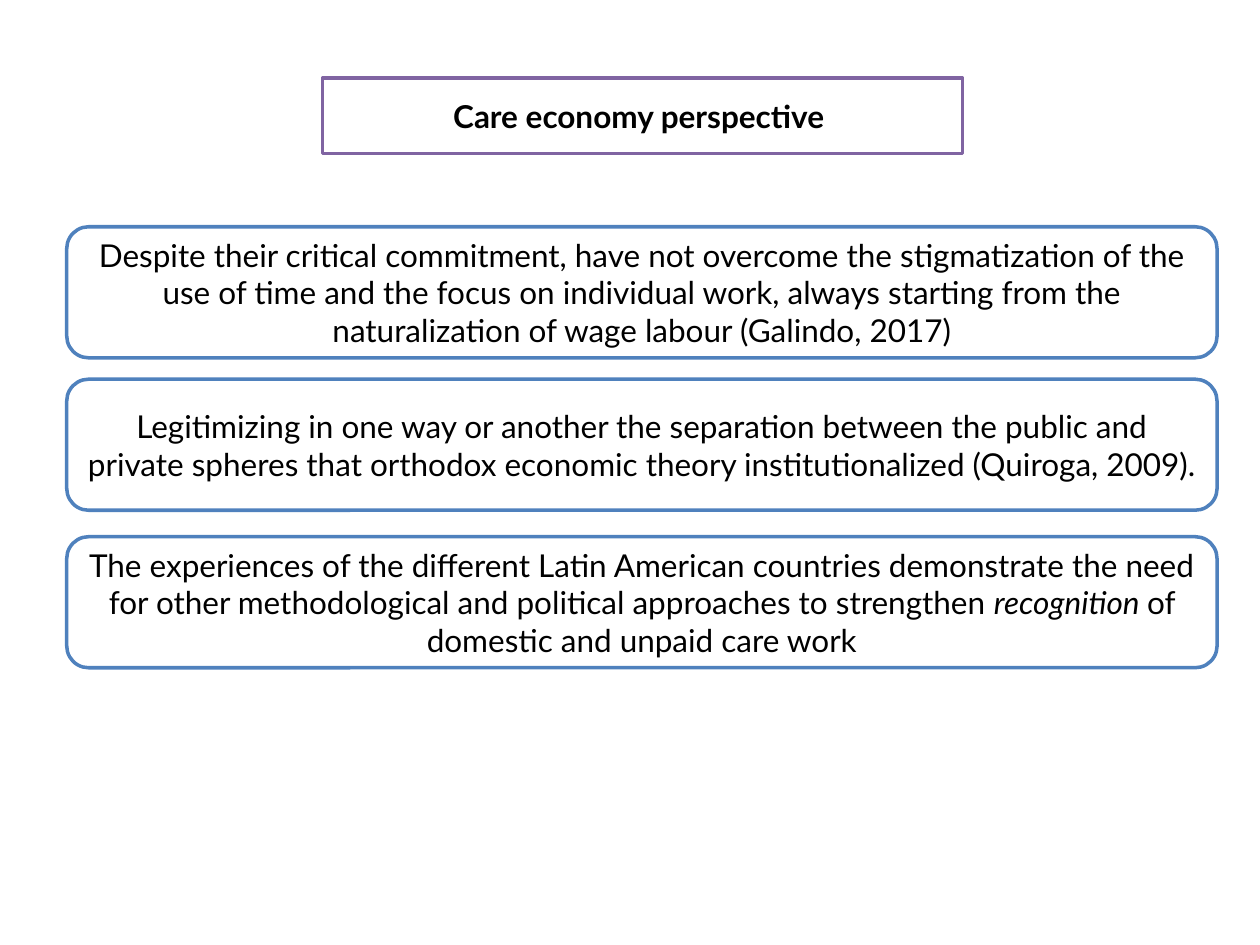
from lxml.etree import SubElement
from pptx import Presentation
from pptx.dml.color import RGBColor
from pptx.enum.shapes import MSO_SHAPE
from pptx.enum.text import MSO_ANCHOR, MSO_AUTO_SIZE, PP_ALIGN
from pptx.oxml.ns import qn
from pptx.util import Inches, Pt

# Content: each text is a list of (words, italic) runs
TITLE = [("Care economy perspective ", False)]
STATEMENTS = [
    [("Despite their critical commitment, have not overcome the stigmatization "
      "of the use of time and the focus on individual work, always starting "
      "from the naturalization of wage labour (Galindo, 2017)", False)],
    [("Legitimizing in one way or another the separation between the public "
      "and private spheres that orthodox economic theory institutionalized "
      "(Quiroga, 2009). ", False)],
    [("The experiences of the different Latin American countries demonstrate "
      "the need for other methodological and political approaches to "
      "strengthen ", False),
     ("recognition ", True),
     ("of domestic and unpaid care work", False)],
]

# Layout
STATEMENT_TOPS = [1.8, 3.01, 4.26]
LEFT, WIDTH, HEIGHT = 0.53, 9.13, 1.04

# Style
FONT = "Lato"
WHITE = RGBColor(0xFF, 0xFF, 0xFF)
BLACK = RGBColor(0x00, 0x00, 0x00)
PURPLE = RGBColor(0x80, 0x64, 0xA2)
BLUE = RGBColor(0x4F, 0x81, 0xBD)


def format_box(sp, runs, color, bold=False):
    """Fill and outline a box, and centre its text."""
    sp.shadow.inherit = False
    sp.fill.solid()
    sp.fill.fore_color.rgb = WHITE
    sp.line.color.rgb = color
    sp.line.width = Pt(2)
    tf = sp.text_frame
    tf.word_wrap = True
    tf.auto_size = MSO_AUTO_SIZE.NONE
    tf.vertical_anchor = MSO_ANCHOR.MIDDLE
    p = tf.paragraphs[0]
    p.alignment = PP_ALIGN.CENTER
    p.font.name = FONT
    p.font.size = Pt(18)
    p.font.bold = bold
    p.font.color.rgb = BLACK
    for words, italic in runs:
        r = p.add_run()
        r.text = words
        if italic:
            r.font.italic = True


prs = Presentation()
prs.slide_width, prs.slide_height = Inches(10), Inches(7.5)
s = prs.slides.add_slide(prs.slide_layouts.get_by_name("Title Only"))

# Title placeholder with a rounded outline
title = s.shapes.title
title.left, title.top = Inches(2.56), Inches(0.62)
title.width, title.height = Inches(5.08), Inches(0.6)
geometry = SubElement(title.element.spPr, qn("a:prstGeom"), prst="roundRect")
SubElement(geometry, qn("a:avLst"))
format_box(title, TITLE, PURPLE, bold=True)

# Statement boxes
for top, runs in zip(STATEMENT_TOPS, STATEMENTS):
    sp = s.shapes.add_shape(MSO_SHAPE.ROUNDED_RECTANGLE, Inches(LEFT),
                            Inches(top), Inches(WIDTH), Inches(HEIGHT))
    format_box(sp, runs, BLUE)

prs.save("out.pptx")
